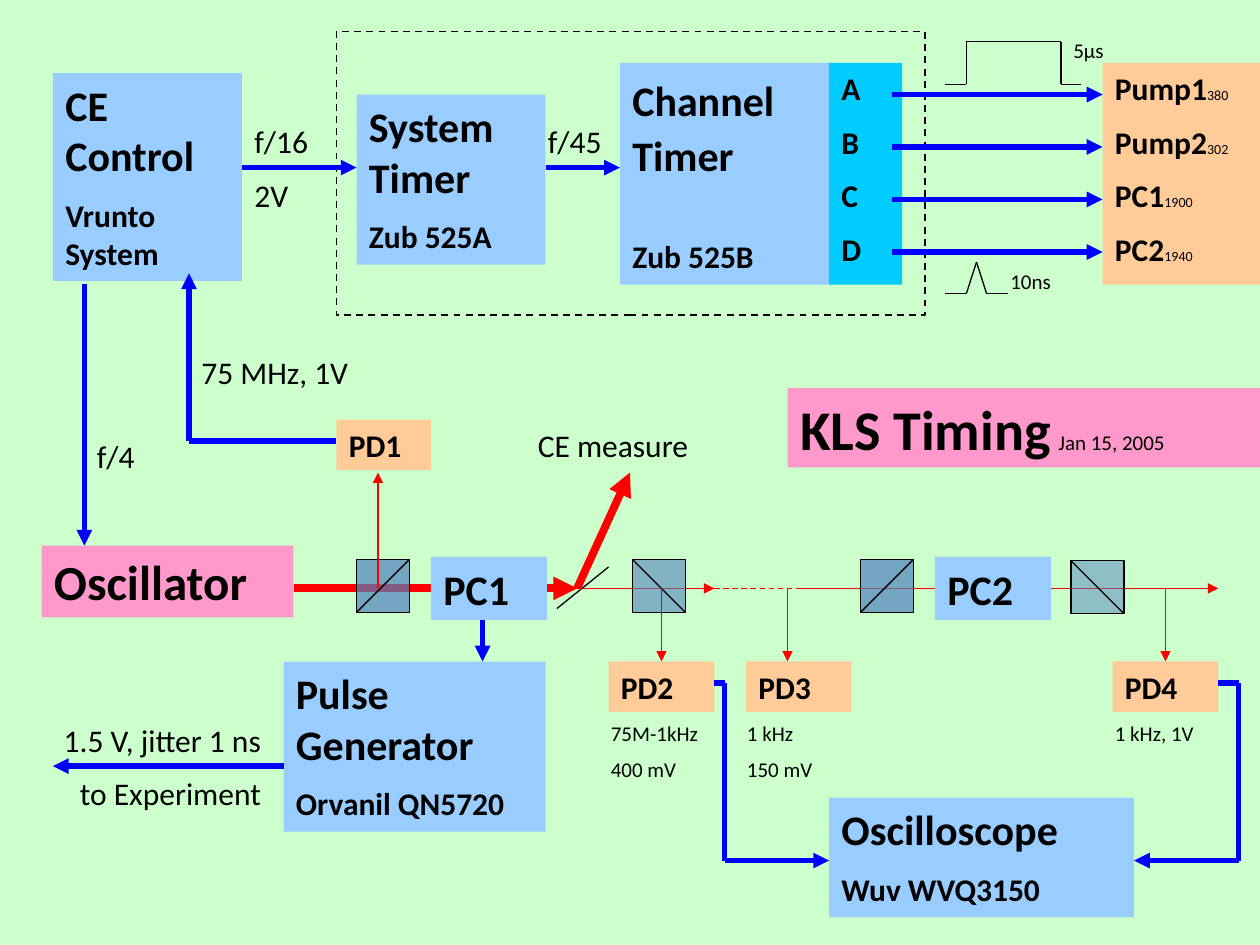
"""Build the KLS timing diagram slide."""
from lxml import etree
from pptx import Presentation
from pptx import util as u
from pptx.dml.color import RGBColor
from pptx.enum import dml, shapes, text
from pptx.oxml import ns

hue = RGBColor.from_string
RED, BLUE, BLACK = "FF0000", "0000FF", "000000"
SKY, PEACH, PINK = "99CCFF", "FFCC99", "FF99CC"


def write(shape, paras, align=text.PP_ALIGN.LEFT):
    """Fill a shape with paragraphs of (text, size, bold) runs."""
    frame = shape.text_frame
    frame.word_wrap = True
    frame.auto_size = text.MSO_AUTO_SIZE.SHAPE_TO_FIT_TEXT
    frame.vertical_anchor = text.MSO_ANCHOR.TOP
    for i, runs in enumerate(paras):
        para = frame.add_paragraph() if i else frame.paragraphs[0]
        para.alignment = align
        if i:
            para.space_before = u.Pt(runs[0][1] / 2)
        for words, size, bold in runs:
            run = para.add_run()
            run.text = words
            run.font.name = "Calibri"
            run.font.size = u.Pt(size)
            run.font.bold = bold
            run.font.color.rgb = hue(BLACK)


def wire(points, color, width, head=True, dash=False):
    """Join points with straight lines and return the last one."""
    for start, end in zip(points, points[1:]):
        line = slide.shapes.add_connector(
            shapes.MSO_CONNECTOR.STRAIGHT, *map(u.Inches, start + end))
        line.line.color.rgb = hue(color)
        line.line.width = u.Pt(width)
        if dash:
            line.line.dash_style = dml.MSO_LINE.DASH
        props = line._element.spPr
        etree.SubElement(props, ns.qn("a:effectLst"))
    if head:
        tip = etree.SubElement(props.find(ns.qn("a:ln")), ns.qn("a:tailEnd"))
        tip.set("type", "triangle")
    return line


deck = Presentation()
deck.slide_width, deck.slide_height = u.Inches(10), u.Inches(7.5)
slide = deck.slides.add_slide(deck.slide_layouts[5])
rect = shapes.MSO_SHAPE.RECTANGLE

back = slide.shapes.add_shape(rect, 0, 0, deck.slide_width, deck.slide_height)
back.shadow.inherit = False
back.fill.solid()
back.fill.fore_color.rgb = hue("CCFFCC")
back.line.fill.background()

beam = 4.67
for left, right, width, head, dash in [
    (6.33, 9.67, 1, True, False),
    (2.33, 4.58, 4.5, True, False),
    (4.58, 5.67, 0.75, True, False),
    (5.67, 6.33, 0.75, False, True),
]:
    wire([(left, beam), (right, beam)], RED, width, head, dash)

parts = {}
for name, model, size, fill, at in [
    ("Oscillator", "", 28, PINK, (0.33, 4.33, 2, 0.57)),
    ("PC1", "", 24, SKY, (3.42, 4.42, 0.92, 0.5)),
    ("PC2", "", 24, SKY, (7.42, 4.42, 0.92, 0.5)),
    ("PD1", "", 18, PEACH, (2.67, 3.33, 0.75, 0.4)),
    ("PD2", "", 18, PEACH, (4.83, 5.25, 0.84, 0.4)),
    ("PD3", "", 18, PEACH, (5.92, 5.25, 0.84, 0.4)),
    ("PD4", "", 18, PEACH, (8.83, 5.25, 0.84, 0.4)),
    ("CE Control", "Vrunto System", 24, SKY, (0.42, 0.58, 1.5, 1.65)),
    ("System Timer", "Zub 525A", 24, SKY, (2.83, 0.75, 1.5, 1.35)),
    ("Channel Timer", "Zub 525B", 24, SKY, (4.92, 0.5, 1.67, 1.76)),
    ("Pulse Generator", "Orvanil QN5720", 24, SKY, (2.25, 5.25, 2.08, 1.35)),
    ("Oscilloscope", "Wuv WVQ3150", 24, SKY, (6.58, 6.33, 2.42, 0.95)),
    ("Ports", "", 18, "00CCFF", (6.58, 0.5, 0.58, 1.76)),
    ("Targets", "", 18, PEACH, (8.75, 0.5, 1.25, 1.76)),
]:
    part = slide.shapes.add_shape(rect, *map(u.Inches, at))
    part.shadow.inherit = False
    part.fill.solid()
    part.fill.fore_color.rgb = hue(fill)
    part.line.fill.background()
    parts[name] = part
    if name == "Ports":
        paras = [[(port, size, True)] for port in "ABCD"]
    elif name == "Targets":
        paras = [[(goal, size, True), (delay, 8, False)] for goal, delay in [
            ("Pump1", "380"), ("Pump2", "302"), ("PC1", "1900"), ("PC2", "1940")]]
    else:
        paras = [[(name, size, True)]] + ([[(model, 18, True)]] if model else [])
    write(part, paras)
for para, gap in zip(parts["Channel Timer"].text_frame.paragraphs, (1.1, 2.1)):
    para.line_spacing = gap

side = 0.42
for left, top, alpha, rise in [
    (2.83, 4.44, 70, True), (6.83, 4.44, 70, True),
    (5.02, 4.44, 60, False), (8.5, 4.45, 50, True),
]:
    cube = slide.shapes.add_shape(rect, *map(u.Inches, (left, top, side, side)))
    cube.shadow.inherit = False
    cube.fill.solid()
    cube.fill.fore_color.rgb = hue("4F81BD")
    tint = cube._element.spPr.find(".//" + ns.qn("a:srgbClr"))
    etree.SubElement(tint, ns.qn("a:alpha")).set("val", str(alpha * 1000))
    cube.line.color.rgb = hue(BLACK)
    cube.line.width = u.Pt(0.75)
    ends = (top + side, top) if rise and left < 8 else (top, top + side)
    wire([(left, ends[0]), (left + side, ends[1])], BLACK, 0.75, False)

frame = slide.shapes.add_shape(rect, *map(u.Inches, (2.67, 0.25, 4.67, 2.25)))
frame.shadow.inherit = False
frame.fill.background()
frame.line.color.rgb = hue(BLACK)
frame.line.width = u.Pt(1)
frame.line.dash_style = dml.MSO_LINE.DASH

for lines, size, at in [
    (["CE measure"], 18, (4.17, 3.33, 1.83, 0.4)),
    (["75 MHz, 1V"], 18, (1.5, 2.75, 1.58, 0.4)),
    (["f/16", "2V"], 18, (1.92, 0.92, 0.75, 0.85)),
    (["f/45"], 18, (4.25, 0.92, 0.75, 0.4)),
    (["f/4"], 18, (0.67, 3.42, 0.5, 0.4)),
    (["10ns"], 12, (7.92, 2.08, 0.58, 0.3)),
    (["5µs"], 12, (8.42, 0.25, 0.58, 0.3)),
    (["75M-1kHz", "400 mV"], 12, (4.75, 5.67, 1, 0.6)),
    (["1 kHz", "150 mV"], 12, (5.83, 5.67, 1, 0.6)),
    (["1 kHz, 1V"], 12, (8.75, 5.67, 1, 0.3)),
    (["1.5 V, jitter 1 ns", "to Experiment"], 18, (0, 5.67, 2.17, 0.85)),
]:
    label = slide.shapes.add_textbox(*map(u.Inches, at))
    align = text.PP_ALIGN.LEFT if at[0] else text.PP_ALIGN.RIGHT
    write(label, [[(words, size, False)] for words in lines], align)

for points in [
    [(4.83, 4.5), (4.42, 4.83)],
    [(7.5, 0.67), (7.67, 0.67), (7.67, 0.33), (8.42, 0.33), (8.42, 0.67), (8.58, 0.67)],
    [(7.5, 2.33), (7.67, 2.33), (7.75, 2.08), (7.83, 2.33), (8, 2.33)],
]:
    wire(points, BLACK, 0.75, False)

wire([(4.58, beam), (5, 3.75)], RED, 4.5)
wire([(3, beam), (3, 3.75)], RED, 0.75)
wire([(6.25, beam), (6.25, 5.25)], RED, 0.75)
for name, left in [("PD2", 5.25), ("PD4", 9.25)]:
    wire([(left, beam), (left, 5.25)], RED, 0.75).end_connect(parts[name], 0)

for row in range(4):
    top = 0.75 + row * 1.25 / 3
    wire([(7.08, top), (8.75, top)], BLUE, 3)
for points in [
    [(2.67, 3.5), (1.5, 3.5), (1.5, 2.17)],
    [(1.92, 1.33), (2.83, 1.33)],
    [(4.33, 1.33), (4.92, 1.33)],
    [(0.67, 2.25), (0.67, 4.33)],
    [(3.83, 4.92), (3.83, 5.25)],
    [(2.25, 6.08), (0.42, 6.08)],
    [(5.67, 5.42), (5.75, 5.42), (5.75, 6.83), (6.58, 6.83)],
    [(9.67, 5.42), (9.83, 5.42), (9.83, 6.83), (9, 6.83)],
]:
    wire(points, BLUE, 3)

title = slide.shapes.title
title.left, title.top, title.width, title.height = map(u.Inches, (6.25, 3.08, 3.75, 0.63))
title.fill.solid()
title.fill.fore_color.rgb = hue(PINK)
write(title, [[("KLS Timing", 32, True), (" ", 18, False), ("Jan 15, 2005", 12, False)]])
title.text_frame.auto_size = text.MSO_AUTO_SIZE.NONE
slide.shapes._spTree.append(title._element)

deck.save("out.pptx")
